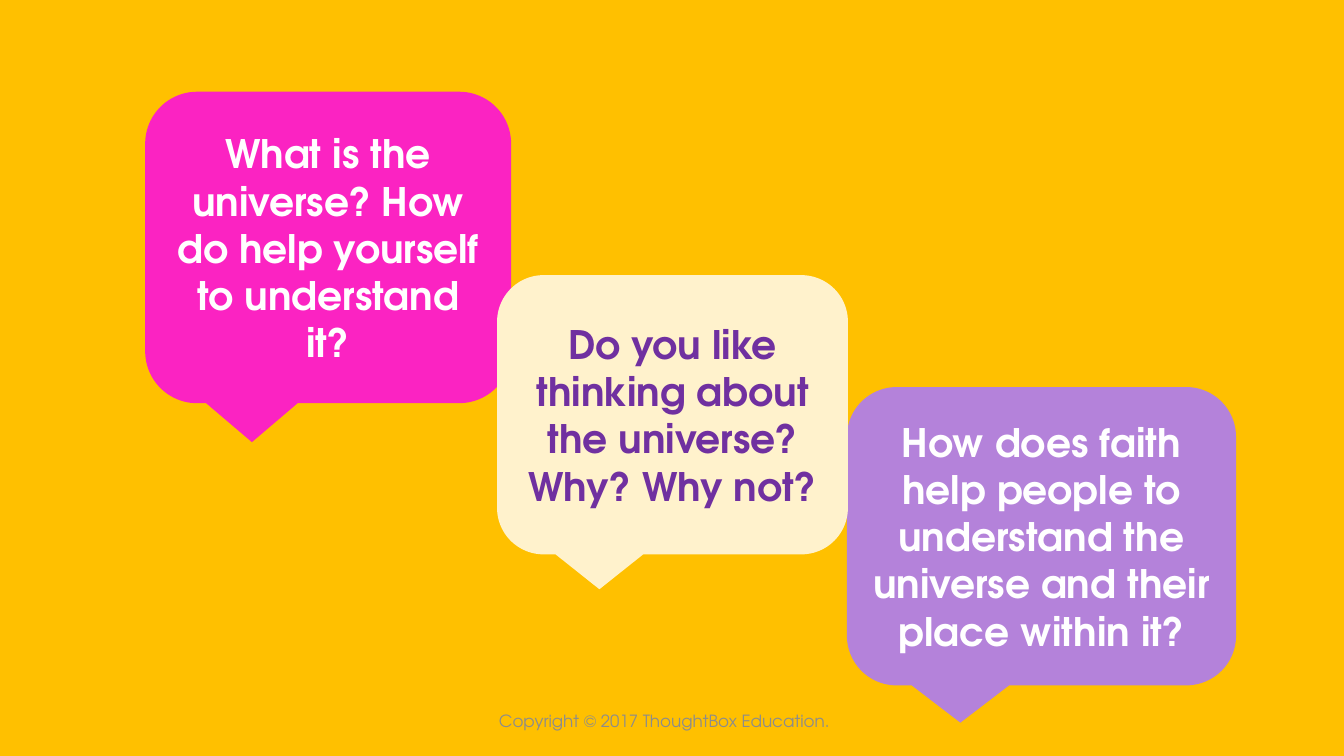
import pptx
import pptx.util
import pptx.dml.color
import pptx.enum.shapes
import pptx.enum.text

Inches = pptx.util.Inches
FONT = "TeX Gyre Adventor"
COLORS = {
    "background": "FFC000",
    "pink": "FB23C2",
    "lilac": "B482DA",
    "cream": "FFF2CC",
    "white": "FFFFFF",
    "purple": "7030A0",
    "grey": "8C8C8C",
}


def rgb(name):
    return pptx.dml.color.RGBColor.from_string(COLORS[name])


def write_text(shape, text, size, color, bold):
    frame = shape.text_frame
    frame.word_wrap = True
    frame.vertical_anchor = pptx.enum.text.MSO_ANCHOR.MIDDLE
    paragraph = frame.paragraphs[0]
    paragraph.text = text
    paragraph.alignment = pptx.enum.text.PP_ALIGN.CENTER
    paragraph.font.name = FONT
    paragraph.font.size = pptx.util.Pt(size)
    paragraph.font.bold = bold
    paragraph.font.color.rgb = rgb(color)


# Slide and background
presentation = pptx.Presentation()
presentation.slide_width = Inches(13.33)
presentation.slide_height = Inches(7.5)
slide = presentation.slides.add_slide(presentation.slide_layouts[6])
slide.background.fill.solid()
slide.background.fill.fore_color.rgb = rgb("background")

# Copyright line
footer = slide.shapes.add_textbox(Inches(4.34), Inches(6.95), Inches(4.5), Inches(0.4))
write_text(footer, "Copyright © 2017 ThoughtBox Education.", 12, "grey", False)

# Speech bubbles, back to front: left, top, width, height, fill, text colour, question
bubbles = [
    (1.44, 0.91, 3.63, 3.09, "pink", "white",
     "What is the universe? How do help yourself to understand it?"),
    (8.4, 3.84, 3.86, 2.96, "lilac", "white",
     "How does faith help people to understand the universe and their place within it?"),
    (4.93, 2.73, 3.48, 2.77, "cream", "purple",
     "Do you like thinking about the universe? Why? Why not?"),
]
for left, top, width, height, fill, text_color, question in bubbles:
    bubble = slide.shapes.add_shape(
        pptx.enum.shapes.MSO_SHAPE.ROUNDED_RECTANGULAR_CALLOUT,
        Inches(left), Inches(top), Inches(width), Inches(height))
    bubble.shadow.inherit = False
    bubble.fill.solid()
    bubble.fill.fore_color.rgb = rgb(fill)
    bubble.line.fill.background()
    write_text(bubble, question, 28, text_color, True)

presentation.save("out.pptx")
